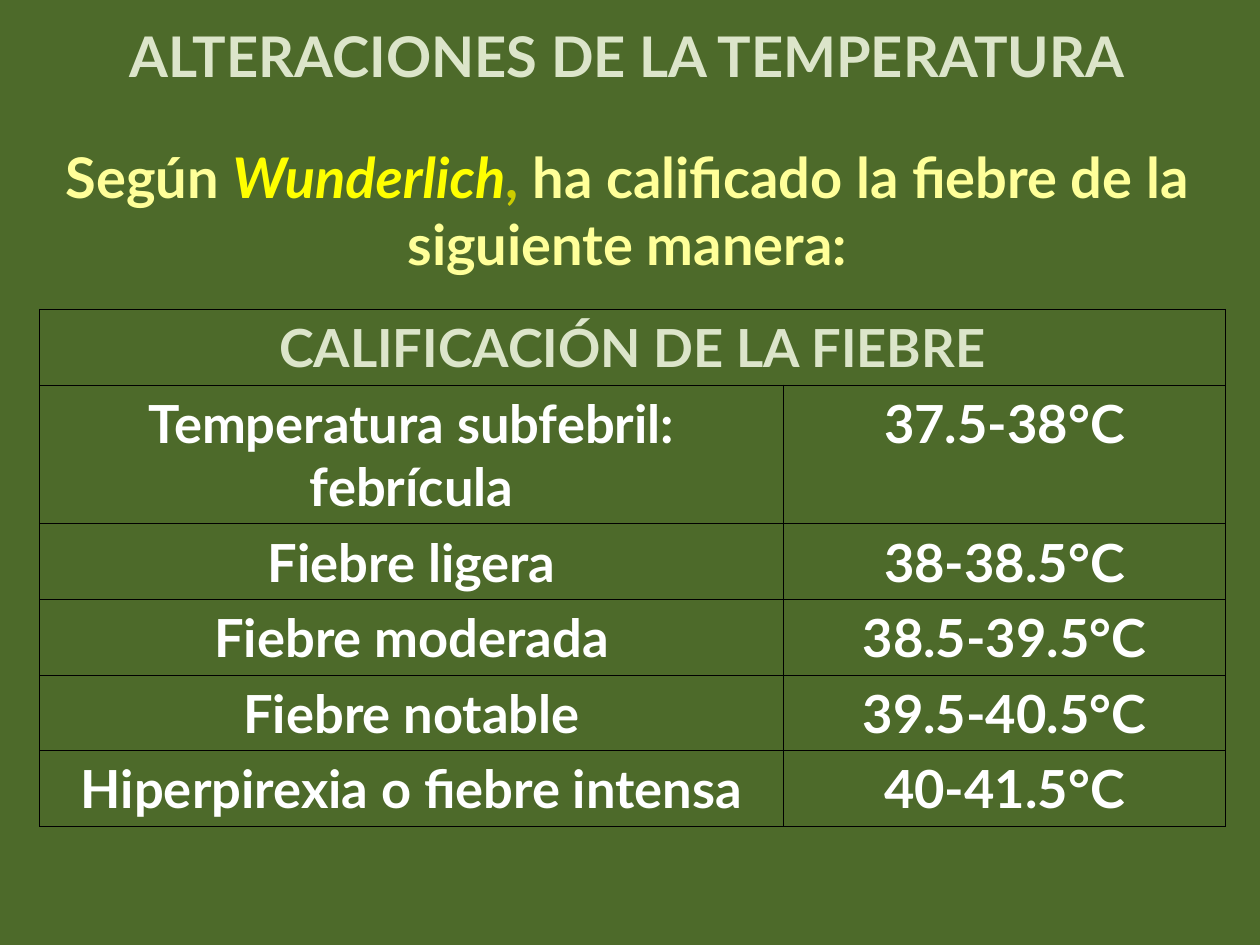
from lxml.etree import SubElement
from pptx import Presentation
from pptx.dml.color import RGBColor
from pptx.enum.text import MSO_ANCHOR as Anchor, MSO_AUTO_SIZE as AutoSize, PP_ALIGN as Align
from pptx.oxml import parse_xml
from pptx.oxml.ns import nsdecls, qn
from pptx.util import Cm, Pt

FEVER_GRADES = [
    ("Temperatura subfebril: febrícula", "37.5-38°C"),
    ("Fiebre ligera", "38-38.5°C"),
    ("Fiebre moderada", "38.5-39.5°C"),
    ("Fiebre notable", "39.5-40.5°C"),
    ("Hiperpirexia o fiebre intensa", "40-41.5°C"),
]


def color(hex_code):
    return RGBColor.from_string(hex_code)


class FeverSlide:
    FONT = "Lato"
    GREEN, PALE, CREAM = "4D6A2A", "DCE5CA", "FFFF99"
    WHITE, BLACK = "FFFFFF", "000000"

    def __init__(self, deck):
        self.slide = deck.slides.add_slide(deck.slide_layouts[1])
        fill = self.slide.background.fill
        fill.solid()
        fill.fore_color.rgb = color(self.GREEN)

    def style(self, paragraph, size, hex_code=None):
        paragraph.alignment = Align.CENTER
        font = paragraph.font
        font.name, font.size, font.bold = self.FONT, Pt(size), True
        if hex_code:
            font.color.rgb = color(hex_code)

    def place(self, holder, left, top, width, height):
        holder.left, holder.top = Cm(left), Cm(top)
        holder.width, holder.height = Cm(width), Cm(height)
        frame = holder.text_frame
        frame.word_wrap = True
        frame.auto_size = AutoSize.SHAPE_TO_FIT_TEXT
        frame.vertical_anchor = Anchor.TOP
        return frame.paragraphs[0]

    def title(self, text, *box):
        heading = self.place(self.slide.shapes.title, *box)
        heading.text = text
        self.style(heading, 32, self.PALE)

    def body(self, pieces, *box):
        """Fill the body with (text, colour, italic) pieces, without a bullet."""
        intro = self.place(self.slide.placeholders[1], *box)
        properties = intro._p.get_or_add_pPr()
        properties.set("marL", "0")
        properties.set("indent", "0")
        SubElement(properties, qn("a:buNone"))
        intro.space_before = Pt(0)
        self.style(intro, 32)
        for text, hex_code, italic in pieces:
            run = intro.add_run()
            run.text = text
            run.font.color.rgb = color(hex_code)
            run.font.italic = italic

    def cell(self, cell, text, hex_code):
        cell.fill.background()
        for position, side in enumerate(("lnL", "lnR", "lnT", "lnB")):
            border = parse_xml(
                f'<a:{side} {nsdecls("a")} w="{Pt(0.75)}"><a:solidFill>'
                f'<a:srgbClr val="{self.BLACK}"/></a:solidFill></a:{side}>')
            cell._tc.get_or_add_tcPr().insert(position, border)
        entry = cell.text_frame.paragraphs[0]
        entry.text = text
        self.style(entry, 30, hex_code)

    def table(self, heading, rows, left, top, widths, heights):
        table = self.slide.shapes.add_table(
            len(heights), len(widths), Cm(left), Cm(top),
            Cm(sum(widths)), Cm(sum(heights))).table
        for column, width in zip(table.columns, widths):
            column.width = Cm(width)
        for row, height in zip(table.rows, heights):
            row.height = Cm(height)
        for r, texts in enumerate([(heading, ""), *rows]):
            for c, text in enumerate(texts):
                self.cell(table.cell(r, c), text, self.WHITE if r else self.PALE)
        table.cell(0, 0).merge(table.cell(0, len(widths) - 1))


def main():
    deck = Presentation()
    deck.slide_width, deck.slide_height = Cm(25.4), Cm(19.05)
    fever = FeverSlide(deck)
    fever.title("ALTERACIONES DE LA TEMPERATURA", 0.2, 0.3, 24.9, 1.62)
    fever.body([
        ("Según ", fever.CREAM, False),
        ("Wunderlich", "FFFF00", True),
        (", ", "CCCC00", False),
        ("ha calificado la fiebre de la siguiente manera:", fever.CREAM, False),
    ], 0.4, 2.74, 24.5, 3)
    fever.table("CALIFICACIÓN DE LA FIEBRE", FEVER_GRADES, 0.8, 6.24,
                widths=[15, 8.9], heights=[1.45, 2.62] + [1.45] * 4)
    deck.save("out.pptx")


if __name__ == "__main__":
    main()
